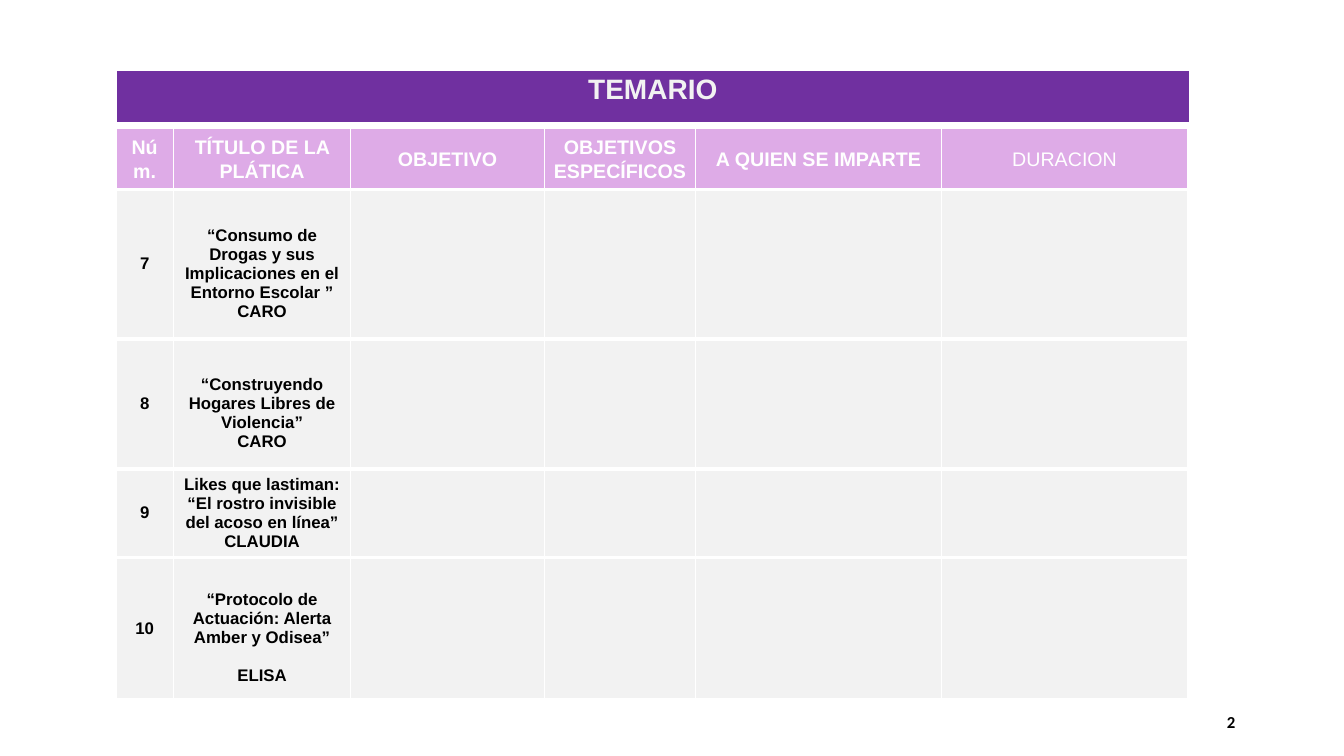
import pptx
import pptx.util
import pptx.enum.text
import pptx.dml.color
import pptx.oxml
import pptx.oxml.ns
from pptx.util import Inches

COLORS = {
    "white": "FFFFFF",
    "black": "000000",
    "purple": "7030A0",
    "pink": "DEABE7",
    "gray": "F2F2F2",
}
HEADS = ["Núm.", "TÍTULO DE LA PLÁTICA", "OBJETIVO",
         "OBJETIVOS ESPECÍFICOS", "A QUIEN SE IMPARTE", "DURACION"]
# number, title, speaker, extra top inset (inches), gap above speaker (points)
TALKS = [
    ("7", "“Consumo de Drogas y sus Implicaciones en el Entorno Escolar ”",
     "CARO", 0.19, 0),
    ("8", "“Construyendo Hogares Libres de Violencia”", "CARO", 0.19, 0),
    ("9", "Likes que lastiman: “El rostro invisible del acoso en línea”",
     "CLAUDIA", 0, 0),
    ("10", "“Protocolo de Actuación: Alerta Amber y Odisea”",
     "ELISA", 0.19, 14),
]
WIDTHS = [0.57, 1.76, 1.92, 1.5, 2.44, 2.44]
HEIGHTS = [0.61, 1.48, 1.29, 0.88, 1.41]
LEFT = 1.15
CENTER = pptx.enum.text.PP_ALIGN.CENTER
MIDDLE = pptx.enum.text.MSO_ANCHOR.MIDDLE


def rgb(name):
    return pptx.dml.color.RGBColor.from_string(COLORS[name])


def style_text(frame, size, color, bold=True, font="Arial", align=CENTER):
    for para in frame.paragraphs:
        para.alignment = align
        for run in para.runs:
            run.font.name = font
            run.font.size = pptx.util.Pt(size)
            run.font.bold = bold
            run.font.color.rgb = rgb(color)


def set_edges(cell, top=3, bottom=3):
    """Draw white cell borders, with widths in points."""
    props = cell._tc.get_or_add_tcPr()
    sides = [("L", 1), ("R", 1), ("T", top), ("B", bottom)]
    for spot, (side, width) in enumerate(sides):
        line = pptx.oxml.parse_xml(
            f'<a:ln{side} {pptx.oxml.ns.nsdecls("a")} w="{pptx.util.Pt(width)}">'
            f'<a:solidFill><a:srgbClr val="{COLORS["white"]}"/></a:solidFill>'
            f'</a:ln{side}>')
        props.insert(spot, line)


def fill_cell(cell, color):
    cell.fill.solid()
    cell.fill.fore_color.rgb = rgb(color)
    cell.margin_left = cell.margin_right = Inches(0.09)
    cell.margin_top = cell.margin_bottom = Inches(0.04)


def add_grid(slide, top, widths, heights):
    """Add a plain table with the given column widths and row heights."""
    frame = slide.shapes.add_table(
        len(heights), len(widths), Inches(LEFT), Inches(top),
        Inches(sum(widths)), Inches(sum(heights)))
    table = frame.table
    table.first_row = table.horz_banding = False
    for col, width in zip(table.columns, widths):
        col.width = Inches(width)
    for row, height in zip(table.rows, heights):
        row.height = Inches(height)
    return table


def add_banner(slide):
    cell = add_grid(slide, 0.7, [10.65], [0.53]).cell(0, 0)
    fill_cell(cell, "purple")
    set_edges(cell, top=1)
    cell.text_frame.text = "TEMARIO"
    style_text(cell.text_frame, 20, "gray")


def add_topics(slide):
    table = add_grid(slide, 1.27, WIDTHS, HEIGHTS)
    for col, head in enumerate(HEADS):
        cell = table.cell(0, col)
        fill_cell(cell, "pink")
        set_edges(cell, top=1)
        cell.vertical_anchor = MIDDLE
        cell.text_frame.text = head
        cell.text_frame.paragraphs[0].line_spacing = 1.07
        style_text(cell.text_frame, 14, "white", bold=head != "DURACION")
    for row, (num, title, name, inset, gap) in enumerate(TALKS, 1):
        for col in range(len(HEADS)):
            fill_cell(table.cell(row, col), "gray")
            set_edges(table.cell(row, col))
        for col, text in enumerate([num, f"{title}\n{name}"]):
            cell = table.cell(row, col)
            cell.vertical_anchor = MIDDLE
            cell.text_frame.text = text
            style_text(cell.text_frame, 12, "black")
        cell.margin_top = Inches(0.04 + inset)
        cell.text_frame.paragraphs[-1].space_before = pptx.util.Pt(gap)


def add_number(slide):
    box = slide.shapes.add_textbox(
        Inches(12.07), Inches(7.01), Inches(0.41), Inches(0.3))
    frame = box.text_frame
    frame.word_wrap = True
    frame.auto_size = pptx.enum.text.MSO_AUTO_SIZE.SHAPE_TO_FIT_TEXT
    frame.text = "2"
    style_text(frame, 12, "black", font="Calibri",
               align=pptx.enum.text.PP_ALIGN.LEFT)


def main():
    deck = pptx.Presentation()
    deck.slide_width = Inches(13.33)
    deck.slide_height = Inches(7.5)
    slide = deck.slides.add_slide(deck.slide_layouts[6])
    add_topics(slide)
    add_banner(slide)
    add_number(slide)
    deck.save("out.pptx")


if __name__ == "__main__":
    main()
